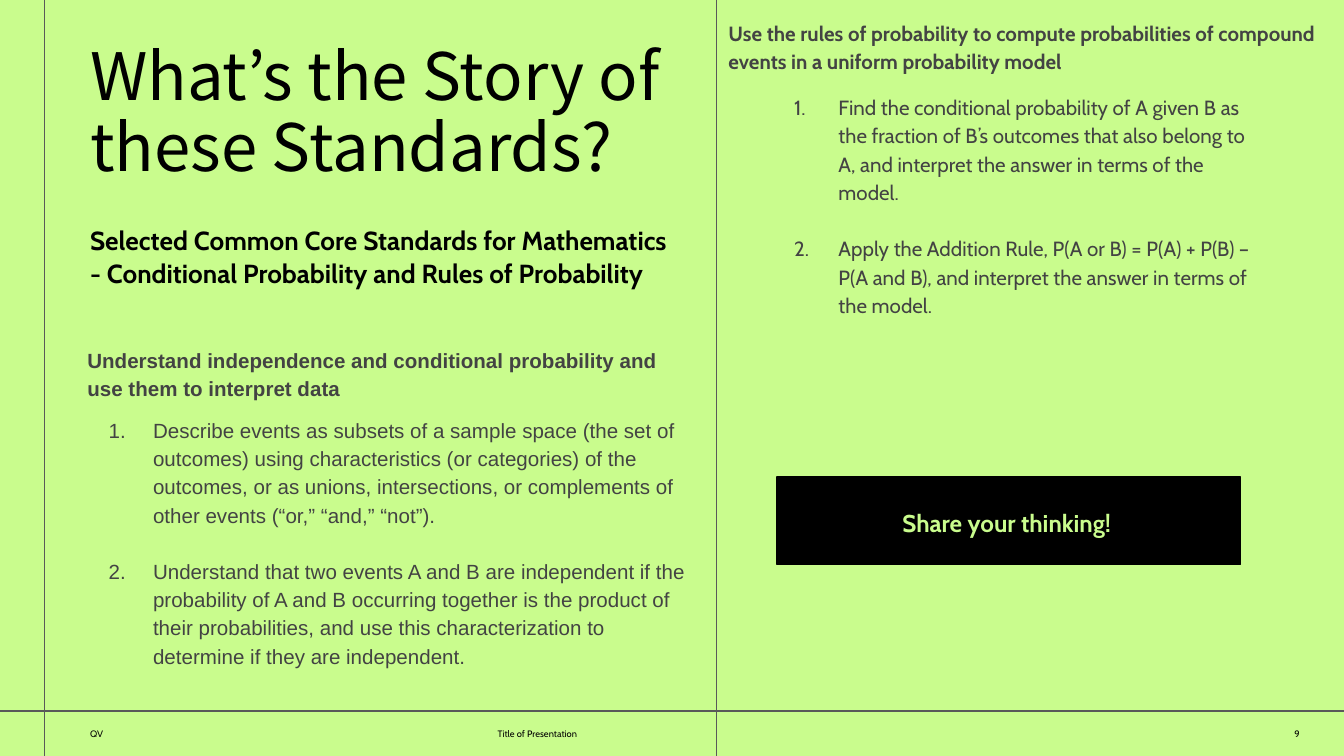
from lxml import etree
from pptx import Presentation
from pptx.dml.color import RGBColor
from pptx.enum.shapes import MSO_CONNECTOR, MSO_SHAPE
from pptx.enum.text import MSO_ANCHOR, PP_ALIGN
from pptx.oxml.ns import qn
from pptx.util import Inches, Pt

LINE, RECT = MSO_CONNECTOR.STRAIGHT, MSO_SHAPE.RECTANGLE
TOP, MID = MSO_ANCHOR.TOP, MSO_ANCHOR.MIDDLE
LEFT, MIDDLE, RIGHT = PP_ALIGN.LEFT, PP_ALIGN.CENTER, PP_ALIGN.RIGHT

WIDE = 10
HIGH = WIDE * 9 / 16
FOOT = 5.29
COLORS = {"lime": "C9FC8D", "ink": "000000", "gray": "434343", "rule": "595959"}


def color(name):
    return RGBColor.from_string(COLORS[name])


def number(para):
    """Give a paragraph a hanging automatic number."""
    props = para._p.get_or_add_pPr()
    props.set("marL", str(Inches(0.5)))
    props.set("indent", str(Inches(-0.33)))
    tint = etree.SubElement(props, qn("a:buClr"))
    etree.SubElement(tint, qn("a:srgbClr"), val=COLORS["gray"])
    etree.SubElement(props, qn("a:buAutoNum"), type="arabicPeriod")


def add_text(slide, box, lines, size=11, font="Cabin", ink="ink", bold=False,
             align=LEFT, anchor=TOP, space=1.0, inset=(0, 0), listed=False):
    """Place text, one paragraph per entry; inset is (left and right, top)."""
    frame = slide.shapes.add_textbox(*map(Inches, box)).text_frame
    frame.word_wrap = True
    frame.vertical_anchor = anchor
    frame.margin_left = Inches(inset[0])
    frame.margin_right = 0 if listed else Inches(inset[0])
    frame.margin_top = frame.margin_bottom = Inches(inset[1])
    for i, line in enumerate(lines):
        para = frame.paragraphs[0] if i == 0 else frame.add_paragraph()
        para.alignment = align
        para.line_spacing = space
        if listed:
            para.space_after = Pt(15)
            number(para)
        run = para.add_run()
        run.text = line
        run.font.size = Pt(size)
        run.font.name = font
        run.font.bold = bold
        run.font.color.rgb = color(ink)
        if "CJK" in font:
            etree.SubElement(run._r.get_or_add_rPr(), qn("a:ea"), typeface=font)


def add_rule(slide, x1, y1, x2, y2):
    rule = slide.shapes.add_connector(LINE, *map(Inches, (x1, y1, x2, y2)))
    rule.line.color.rgb = color("rule")
    rule.line.width = Pt(0.75)
    etree.SubElement(rule._element.spPr, qn("a:effectLst"))


def add_frame(slide):
    add_rule(slide, 0, FOOT, WIDE, FOOT)
    for x in (0.33, 5.33):
        add_rule(slide, x, 0, x, HIGH)


def add_foot(slide, x, y, w, h):
    gap = 0.1
    part = (w - 2 * gap) / 3
    words = (("QV", LEFT), ("Title of Presentation", LEFT), ("9", RIGHT))
    for i, (word, align) in enumerate(words):
        add_text(slide, (x + i * (part + gap), y, part, h), [word],
                 size=5, align=align, anchor=MID)


def add_intro(slide, x, y, w):
    add_text(slide, (x, y, w, 1.06), ["What’s the Story of these Standards?"],
             size=35, font="Noto Sans CJK KR", space=0.9)
    add_text(slide, (x, y + 1.33, w, 0.73),
             ["Selected Common Core Standards for Mathematics - "
              "Conditional Probability and Rules of Probability"],
             size=14, bold=True, space=1.05)


def add_topic(slide, x, y, head, items, font, shift, drop, wide, high):
    """Place a heading with its numbered list shifted and dropped below it."""
    look = {"font": font, "ink": "gray", "space": 1.15}
    add_text(slide, (x, y, 4.46, 0.4), [head], bold=True, **look)
    add_text(slide, (x + shift, y + drop, wide, high), items,
             inset=(0.1, 0), listed=True, **look)


def add_prompt(slide, x, y, w, h):
    bar = slide.shapes.add_shape(RECT, *map(Inches, (x, y, w, h)))
    bar.shadow.inherit = False
    bar.fill.solid()
    bar.fill.fore_color.rgb = color("ink")
    bar.line.color.rgb = color("ink")
    bar.line.width = Pt(0.75)
    add_text(slide, (x + 0.22, y + 0.13, w - 0.47, 0.42),
             ["Share your thinking!"], size=13, ink="lime", bold=True,
             align=MIDDLE, inset=(0.1, 0.1))


def main():
    deck = Presentation()
    deck.slide_width, deck.slide_height = Inches(WIDE), Inches(HIGH)
    slide = deck.slides.add_slide(deck.slide_layouts[6])
    slide.background.fill.solid()
    slide.background.fill.fore_color.rgb = color("lime")

    add_frame(slide)
    add_foot(slide, 0.67, FOOT, 9, 0.34)

    # Left half
    add_intro(slide, 0.67, 0.33, 4.41)
    add_topic(
        slide, 0.65, 2.56,
        "Understand independence and conditional probability and use them "
        "to interpret data",
        ["Describe events as subsets of a sample space (the set of outcomes) "
         "using characteristics (or categories) of the outcomes, or as unions, "
         "intersections, or complements of other events (“or,” “and,” “not”).",
         "Understand that two events A and B are independent if the probability "
         "of A and B occurring together is the product of their probabilities, "
         "and use this characterization to determine if they are independent."],
        font="Arial", shift=-0.11, drop=0.52, wide=4.59, high=2.12)

    # Right half
    add_topic(
        slide, 5.42, 0.13,
        "Use the rules of probability to compute probabilities of compound "
        "events in a uniform probability model",
        ["Find the conditional probability of A given B as the fraction of B’s "
         "outcomes that also belong to A, and interpret the answer in terms of "
         "the model.",
         "Apply the Addition Rule, P(A or B) = P(A) + P(B) – P(A and B), and "
         "interpret the answer in terms of the model."],
        font="Cabin", shift=0.22, drop=0.55, wide=3.72, high=1.68)
    add_prompt(slide, 5.78, 3.55, 3.45, 0.65)

    deck.save("out.pptx")


if __name__ == "__main__":
    main()
